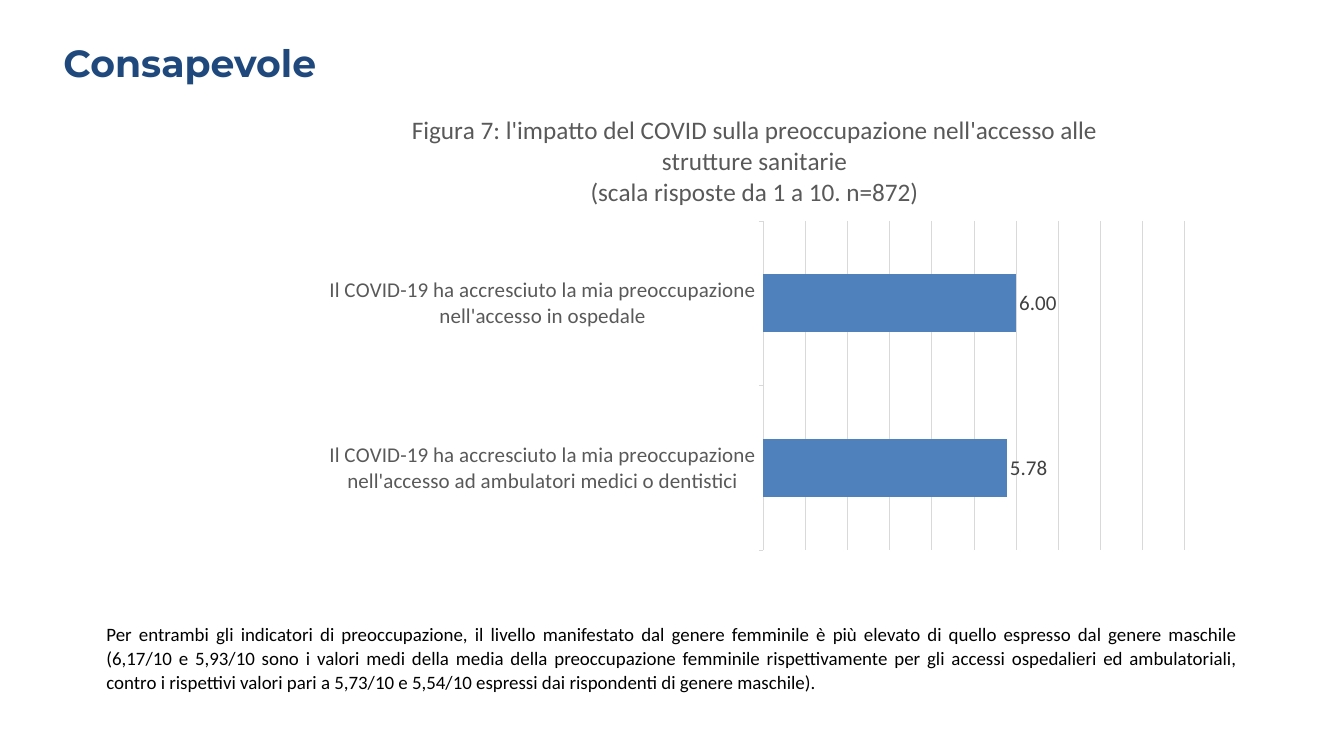
from lxml import etree
from pptx import Presentation
from pptx.chart.data import CategoryChartData
from pptx.dml.color import RGBColor
from pptx.enum.chart import XL_CHART_TYPE, XL_LABEL_POSITION, XL_TICK_MARK
from pptx.enum.text import PP_ALIGN
from pptx.oxml.ns import qn
from pptx.util import Inches, Pt

BAR = XL_CHART_TYPE.BAR_CLUSTERED
OUTSIDE_END = XL_LABEL_POSITION.OUTSIDE_END
TICK_OUT, TICK_NONE = XL_TICK_MARK.OUTSIDE, XL_TICK_MARK.NONE
JUSTIFY = PP_ALIGN.JUSTIFY

COLORS = {
    "heading": "1F497D",
    "bar": "4F81BD",
    "axis_text": "595959",
    "value_text": "404040",
    "grid": "D9D9D9",
    "body": "000000",
}
NUMBER_FORMAT = "###0.00"
HEADING = "Consapevole"
FIGURE_TITLE = (
    "Figura 7: l'impatto del COVID sulla preoccupazione nell'accesso alle strutture sanitarie",
    "(scala risposte da 1 a 10. n=872)",
)
CONCERNS = {
    "Il COVID-19 ha accresciuto la mia preoccupazione nell'accesso ad ambulatori medici o dentistici": 5.78,
    "Il COVID-19 ha accresciuto la mia preoccupazione nell'accesso in ospedale": 6.00,
}
COMMENT = (
    "Per entrambi gli indicatori di preoccupazione, il livello manifestato dal genere femminile "
    "è più elevato di quello espresso dal genere maschile (6,17/10 e 5,93/10 sono i valori medi "
    "della media della preoccupazione femminile rispettivamente per gli accessi ospedalieri ed "
    "ambulatoriali, contro i rispettivi valori pari a 5,73/10 e 5,54/10 espressi dai rispondenti "
    "di genere maschile)."
)


def style_font(font, size, color, name="Calibri", bold=False):
    """Set the face, size, weight and colour of a font."""
    font.name, font.size, font.bold = name, Pt(size), bold
    font.color.rgb = RGBColor.from_string(COLORS[color])


def style_line(line):
    """Give an axis or gridline the thin grey stroke."""
    line.color.rgb = RGBColor.from_string(COLORS["grid"])
    line.width = Pt(0.75)


def add_text(slide, box, text, size, color, name="Calibri", bold=False):
    """Add a wrapped one-paragraph text box and return its paragraph."""
    frame = slide.shapes.add_textbox(*map(Inches, box)).text_frame
    frame.word_wrap = True
    paragraph = frame.paragraphs[0]
    run = paragraph.add_run()
    run.text = text
    style_font(run.font, size, color, name, bold)
    return paragraph


def place_plot(chart, x, y, w, h):
    """Fix the inner plot area at fractions of the chart box."""
    plot_area = chart._chartSpace.chart.plotArea
    for old in plot_area.findall(qn("c:layout")):
        plot_area.remove(old)
    layout = etree.Element(qn("c:layout"))
    manual = etree.SubElement(layout, qn("c:manualLayout"))
    settings = {"layoutTarget": "inner", "xMode": "edge", "yMode": "edge",
                "x": x, "y": y, "w": w, "h": h}
    for tag, value in settings.items():
        etree.SubElement(manual, qn(f"c:{tag}")).set("val", str(value))
    plot_area.insert(0, layout)


def add_concern_chart(slide, box):
    """Draw the bar chart of mean concern scores with its title."""
    data = CategoryChartData(number_format=NUMBER_FORMAT)
    data.categories = list(CONCERNS)
    data.add_series("Series 1", list(CONCERNS.values()))
    chart = slide.shapes.add_chart(BAR, *map(Inches, box), data).chart
    chart.has_legend = False
    style_font(chart.font, 20, "body")

    chart.has_title = True
    title = chart.chart_title
    title.include_in_layout = False
    frame = title.text_frame
    for index, line in enumerate(FIGURE_TITLE):
        paragraph = frame.add_paragraph() if index else frame.paragraphs[0]
        run = paragraph.add_run()
        run.text = line
        style_font(run.font, 24, "axis_text")

    concerns = chart.category_axis
    concerns.major_tick_mark = TICK_OUT
    concerns.minor_tick_mark = TICK_NONE
    style_font(concerns.tick_labels.font, 20, "axis_text")
    style_line(concerns.format.line)

    scores = chart.value_axis
    scores.minimum_scale, scores.maximum_scale, scores.major_unit = 0, 10, 1
    scores.has_major_gridlines = True
    style_line(scores.major_gridlines.format.line)
    scores.visible = False

    plot = chart.plots[0]
    plot.gap_width = 182
    plot.vary_by_categories = False
    fill = plot.series[0].format.fill
    fill.solid()
    fill.fore_color.rgb = RGBColor.from_string(COLORS["bar"])
    plot.has_data_labels = True
    labels = plot.data_labels
    labels.show_value = True
    labels.position = OUTSIDE_END
    labels.number_format, labels.number_format_is_linked = NUMBER_FORMAT, False
    style_font(labels.font, 20, "value_text")
    place_plot(chart, 0.51, 0.265, 0.47, 0.715)


def add_comment(slide, box):
    """Write the justified comment below the chart."""
    paragraph = add_text(slide, box, COMMENT, 18, "body")
    paragraph.alignment = JUSTIFY
    paragraph.line_spacing = 1.07
    paragraph.space_after = Pt(8)


def main():
    """Build and save the slide."""
    deck = Presentation()
    deck.slide_width, deck.slide_height = Inches(17.78), Inches(10)
    slide = deck.slides.add_slide(deck.slide_layouts[6])
    add_text(slide, (0.74, 0.47, 15.16, 0.71), HEADING, 36, "heading", "Montserrat", True)
    add_concern_chart(slide, (4.05, 1.31, 11.86, 6.09))
    add_comment(slide, (1.31, 8.16, 15.16, 1.06))
    deck.save("out.pptx")


if __name__ == "__main__":
    main()
